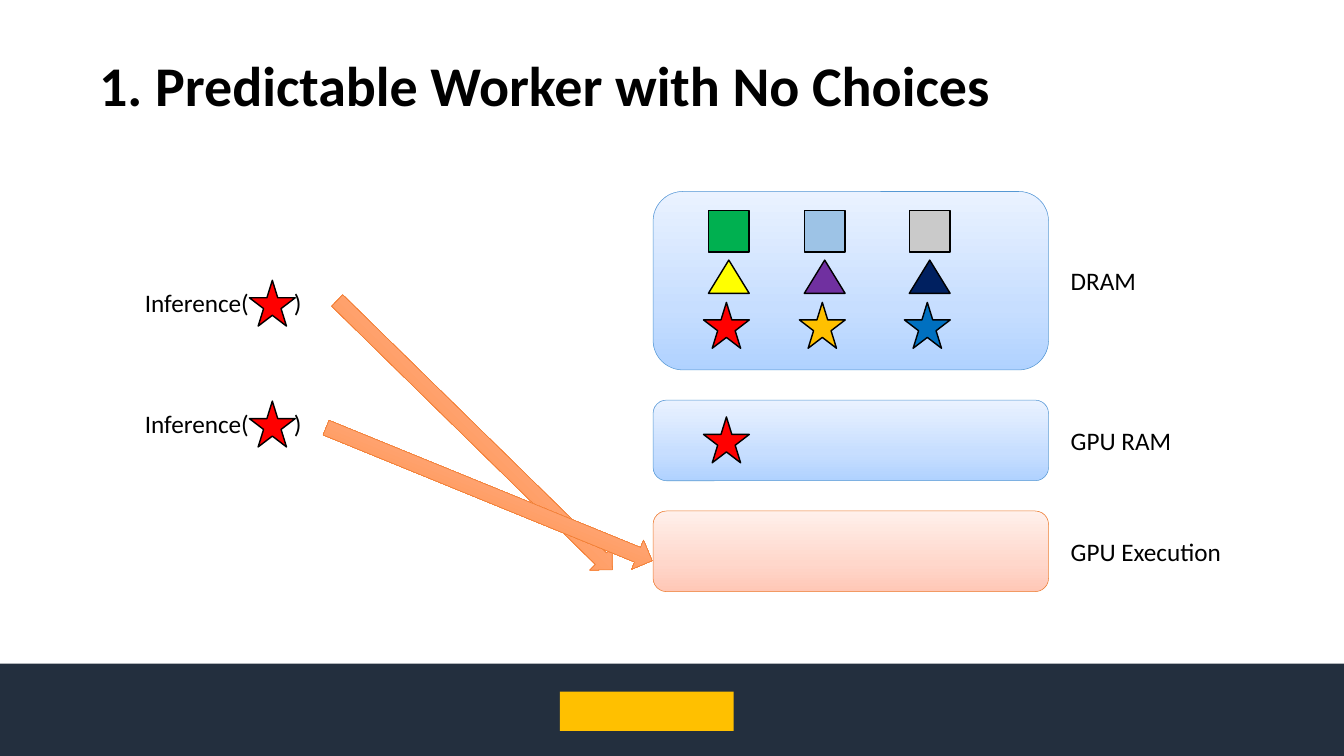
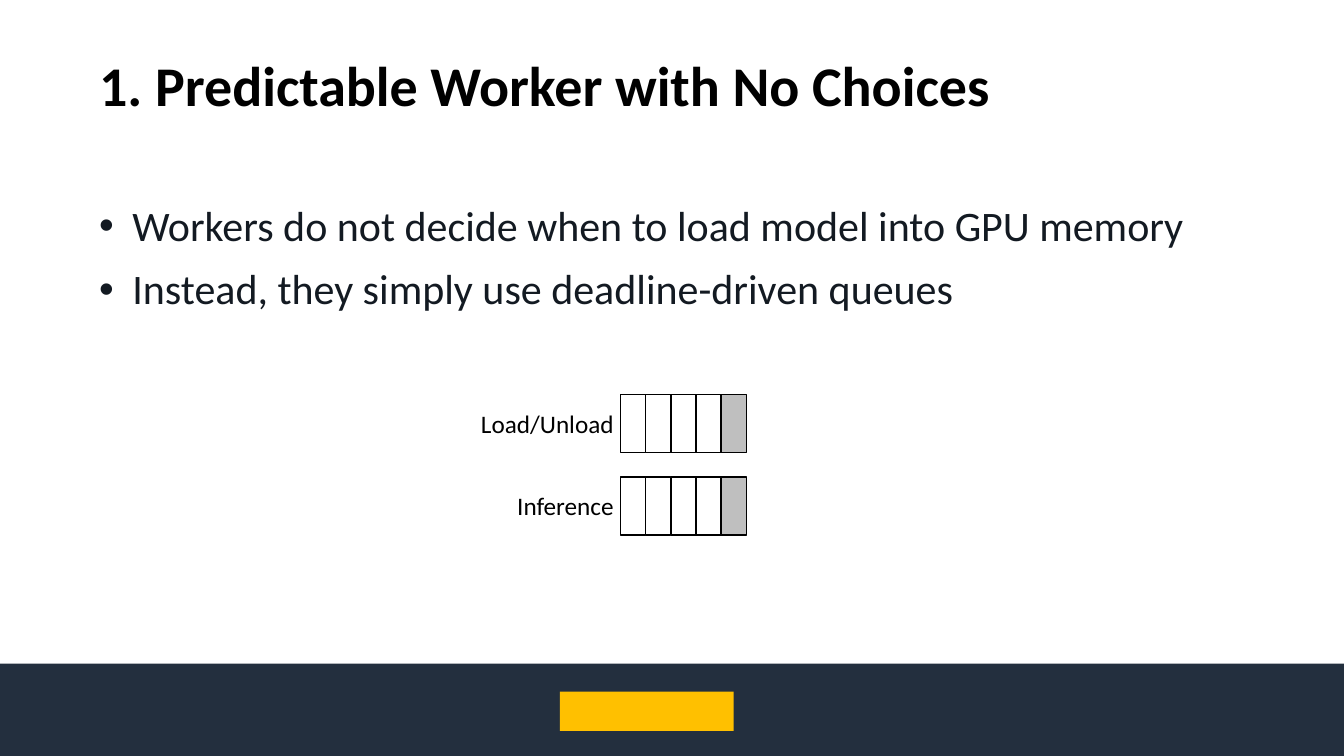
from collections import namedtuple

from lxml.etree import SubElement
from pptx import Presentation
from pptx.dml.color import RGBColor
from pptx.enum.shapes import MSO_SHAPE as Preset
from pptx.enum.text import MSO_ANCHOR as Anchor, PP_ALIGN as Align
from pptx.oxml.ns import qn
from pptx.util import Pt

Box = namedtuple("Box", "left top width height")

COLORS = {
    "band": "232F3E", "white": "FFFFFF", "black": "000000", "accent": "FFC000",
    "body": "131A22", "blue_line": "5698D3", "orange_line": "EC792B", "queue_head": "BFBFBF",
    "green": "00B050", "sky": "9DC3E6", "silver": "CACACA",
    "yellow": "FFFF00", "purple": "7030A0", "navy": "002060",
    "red": "FF0000", "blue": "0070C0",
}
GRADIENTS = {
    "memory": [(0, "B0D2FF"), (35, "C7DEFF"), (100, "EAF2FF")],
    "execution": [(0, "FFC7B6"), (35, "FFD7CB"), (100, "FFF0EB")],
    "arrow": [(0, "FF7A1F"), (100, "FFC7B6")],
}
TEXT_FONT = "Calibri"
TITLE = "1. Predictable Worker with No Choices"
SLIDE = Box(0, 0, 1920, 1080)
LABEL_HEIGHT = 63.4
STAR_SIZE = 65.5


def color_of(name):
    """Return the palette colour with this name."""
    return RGBColor.from_string(COLORS[name])


def fill_gradient(shape, stops):
    """Fill a shape with a gradient that runs from bottom to top."""
    shape.fill.gradient()
    shape.fill.gradient_angle = 90
    stop_list = next(shape._element.iter(qn("a:gsLst")))
    stop_list.clear()
    for position, color in stops:
        stop = SubElement(stop_list, qn("a:gs"), pos=str(position * 1000))
        SubElement(stop, qn("a:srgbClr"), val=color)


def add_preset(slide, preset, box, fill, line="black", line_width=2, rotation=0):
    """Add a preset shape with a plain or gradient fill."""
    shape = slide.shapes.add_shape(preset, *map(Pt, box))
    shape.shadow.inherit = False
    shape.rotation = rotation
    if fill in GRADIENTS:
        fill_gradient(shape, GRADIENTS[fill])
    else:
        shape.fill.solid()
        shape.fill.fore_color.rgb = color_of(fill)
    if line:
        shape.line.color.rgb = color_of(line)
        shape.line.width = Pt(line_width)
    else:
        shape.line.fill.background()


def add_frame(slide, box, anchor=Anchor.TOP):
    """Add an empty wrapping text box and return its text frame."""
    frame = slide.shapes.add_textbox(*map(Pt, box)).text_frame
    frame.word_wrap = True
    frame.vertical_anchor = anchor
    frame.margin_left = frame.margin_right = Pt(9.6)
    frame.margin_top = frame.margin_bottom = Pt(9.6)
    return frame


def add_run(paragraph, text, size=36, color="black", bold=False):
    """Append formatted text to a paragraph."""
    run = paragraph.add_run()
    run.text = text
    run.font.name = TEXT_FONT
    run.font.size = Pt(size)
    run.font.bold = bold
    run.font.color.rgb = color_of(color)


def add_label(slide, text, left, middle, width, align=Align.LEFT):
    """Add a one-line label centred on a given height."""
    box = Box(left, middle - LABEL_HEIGHT / 2, width, LABEL_HEIGHT)
    paragraph = add_frame(slide, box).paragraphs[0]
    paragraph.alignment = align
    add_run(paragraph, text)
    return paragraph


def add_star(slide, left, top, color):
    """Add a star that stands for a model."""
    add_preset(slide, Preset.STAR_5_POINT, Box(left, top, STAR_SIZE, STAR_SIZE), color)


def draw_title(slide, box):
    """Draw the slide title."""
    paragraph = add_frame(slide, box, Anchor.MIDDLE).paragraphs[0]
    paragraph.line_spacing = 0.9
    add_run(paragraph, TITLE, size=80, bold=True)


def draw_footer(slide, box):
    """Draw the dark band with a plain bar on it."""
    add_preset(slide, Preset.RECTANGLE, box, "band", line=None)
    bar = Box(box.left + 800, box.top + 40, 248, 56)
    add_preset(slide, Preset.RECTANGLE, bar, "accent", line=None)


def draw_tier(slide, box, name, fill, line):
    """Draw one rounded tier of the worker with its label to the right."""
    add_preset(slide, Preset.ROUNDED_RECTANGLE, box, fill, line, 0.75)
    add_label(slide, name, box.left + box.width + 22, box.top + box.height / 2, 319)


def draw_models(slide, box):
    """Draw the columns of models held in a tier."""
    columns = [
        (79, "green", "yellow", "red"),
        (216, "sky", "purple", "accent"),
        (366, "silver", "navy", "blue"),
    ]
    for offset, square, triangle, star in columns:
        left = box.left + offset
        add_preset(slide, Preset.RECTANGLE, Box(left, box.top + 27.4, 58.3, 59), square)
        add_preset(slide, Preset.ISOSCELES_TRIANGLE,
                   Box(left, box.top + 98, 58.3, 47.5), triangle)
        add_star(slide, left - 7, box.top + 158.4, star)


def draw_worker(slide, box):
    """Draw the tiers of the worker and the models they hold."""
    dram = Box(box.left, box.top, box.width, 254.9)
    gpu_ram = Box(box.left, box.top + 298, box.width, 115.2)
    execution = gpu_ram._replace(top=box.top + 456.4)
    draw_tier(slide, dram, "DRAM", "memory", "blue_line")
    draw_tier(slide, gpu_ram, "GPU RAM", "memory", "blue_line")
    draw_tier(slide, execution, "GPU Execution", "execution", "orange_line")
    draw_models(slide, dram)
    add_star(slide, gpu_ram.left + 72, gpu_ram.top + 24, "red")


def draw_request(slide, box):
    """Draw an inference call with a star as its argument."""
    paragraph = add_label(slide, "Inference(\t)", box.left, box.top + box.height / 2, box.width)
    tabs = SubElement(paragraph._p.get_or_add_pPr(), qn("a:tabLst"))
    SubElement(tabs, qn("a:tab"), pos=str(Pt(213)), algn="l")
    add_star(slide, box.left + 159, box.top, "red")


def draw_arrow(slide, box, rotation):
    """Draw a block arrow from a request to the execution tier."""
    add_preset(slide, Preset.RIGHT_ARROW, box, "arrow", "orange_line", 0.75, rotation)


def draw_bullets(slide, box, lines):
    """Draw the bulleted body text."""
    frame = add_frame(slide, box)
    for index, line in enumerate(lines):
        paragraph = frame.add_paragraph() if index else frame.paragraphs[0]
        paragraph.line_spacing = 0.9
        paragraph.space_before = Pt(26)
        properties = paragraph._p.get_or_add_pPr()
        properties.set("marL", str(Pt(47.5)))
        properties.set("indent", str(-Pt(47.5)))
        SubElement(properties, qn("a:buFont"), typeface="Arial")
        SubElement(properties, qn("a:buChar"), char="•")
        add_run(paragraph, line, size=60, color="body")


def draw_queue(slide, box, name, cells=5):
    """Draw a queue with a shaded head and its name to the left."""
    cell_width = box.width / cells
    for index in range(cells):
        cell = Box(box.left + index * cell_width, box.top, cell_width, box.height)
        fill = "queue_head" if index == cells - 1 else "white"
        add_preset(slide, Preset.RECTANGLE, cell, fill)
    add_label(slide, name, box.left - 213, box.top + box.height / 2, 213, Align.RIGHT)


def add_base_slide(presentation):
    """Add a blank slide with the shared footer and title."""
    slide = presentation.slides.add_slide(presentation.slide_layouts[6])
    draw_footer(slide, Box(0, 948, SLIDE.width, 132))
    draw_title(slide, Box(132, 21.6, 1656, 208.8))
    return slide


def build_worker_slide(presentation):
    """Build the slide that shows requests reaching the worker."""
    slide = add_base_slide(presentation)
    draw_worker(slide, Box(933, 273.6, 565, 571.6))
    for top in (400.4, 573):
        draw_request(slide, Box(197.3, top, 260, STAR_SIZE))
    draw_arrow(slide, Box(403.2, 599, 550, 45.4), 44.4)
    draw_arrow(slide, Box(447.1, 683.3, 503.3, 45.4), 22.2)


def build_queue_slide(presentation):
    """Build the slide that shows the deadline-driven queues."""
    slide = add_base_slide(presentation)
    draw_bullets(slide, Box(132, 283, 1656, 643.7), [
        "Workers do not decide when to load model into GPU memory",
        "Instead, they simply use deadline-driven queues",
    ])
    for index, name in enumerate(("Load/Unload", "Inference")):
        draw_queue(slide, Box(886.3, 563.8 + index * 117.5, 180, 82.8), name)


def main():
    """Build and save the presentation."""
    presentation = Presentation()
    presentation.slide_width = Pt(SLIDE.width)
    presentation.slide_height = Pt(SLIDE.height)
    build_worker_slide(presentation)
    build_queue_slide(presentation)
    presentation.save("out.pptx")


if __name__ == "__main__":
    main()
